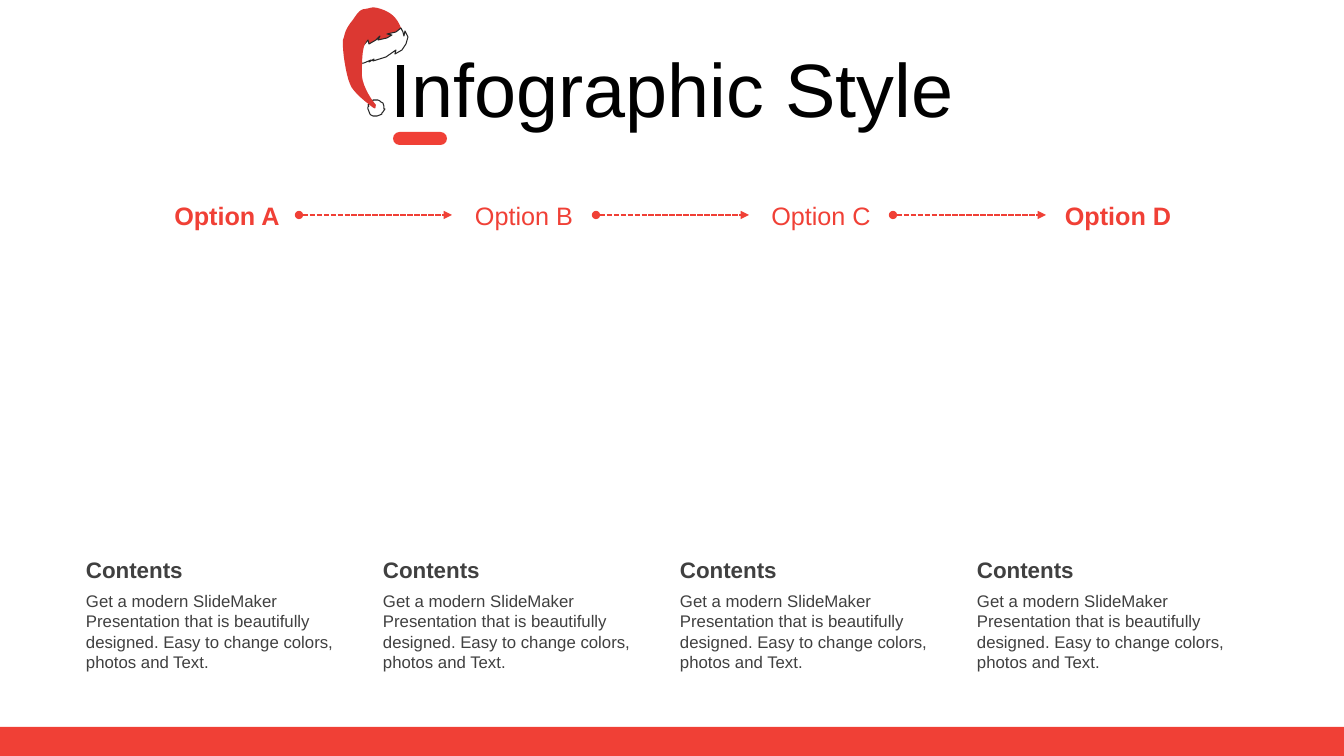
from lxml.etree import SubElement
from pptx import Presentation
from pptx.dml.color import RGBColor
from pptx.enum.dml import MSO_LINE
from pptx.enum.shapes import MSO_CONNECTOR, MSO_SHAPE
from pptx.enum.text import MSO_ANCHOR, MSO_AUTO_SIZE, PP_ALIGN
from pptx.oxml.ns import qn
from pptx.util import Pt

PX = 914400 / 100.8
RED = RGBColor(0xF0, 0x40, 0x36)
HAT_RED = RGBColor(0xDC, 0x38, 0x32)
WHITE = RGBColor(0xFF, 0xFF, 0xFF)
BLACK = RGBColor(0, 0, 0)
GRAY = RGBColor(0x40, 0x40, 0x40)
OUTLINE = RGBColor(0x26, 0x26, 0x26)

TITLE = "Infographic Style"
OPTIONS = [("Option A", True), ("Option B", False), ("Option C", False), ("Option D", True)]
CONTENT = ("Contents", "Get a modern SlideMaker Presentation that is beautifully designed. "
           "Easy to change colors, photos and Text.")

# Column layout in px
COLUMN_STEP = 297
OPTION_LEFT, OPTION_TOP, OPTION_WIDTH, OPTION_HEIGHT = 155, 200, 144, 30
ARROW_Y = 215
CONTENT_LEFT, CONTENT_WIDTH = 86, 267
HEADING_TOP, HEADING_HEIGHT = 556, 27
BODY_TOP, BODY_HEIGHT = 591, 82

# Curved outlines: a start point, then (control, control, end) for each curve
CROWN = ((348, 45), [
    ((347, 44), (345, 43), (344, 42)), ((343, 35), (347, 27), (352, 21)),
    ((356, 16), (359, 9), (365, 9)), ((372, 8), (372, 6), (381, 9)),
    ((390, 12), (397, 17), (401, 28)), ((395, 33), (389, 38), (383, 43)),
    ((377, 43), (368, 44), (362, 44)), ((356, 45), (353, 45), (348, 45))])
TAIL = ((371, 106), [
    ((370, 105), (353, 93), (350, 84)), ((346, 75), (342, 49), (343, 40)),
    ((344, 31), (365, 19), (370, 20)), ((375, 21), (368, 39), (365, 44)),
    ((362, 50), (362, 63), (362, 73)), ((361, 82), (369, 97), (376, 105)),
    ((375, 107), (377, 111), (371, 106))])
POMPOM = [
    (368, 109), (368, 107), (369, 106), (368, 105), (370, 103), (371, 101), (373, 101),
    (373, 100), (375, 100), (378, 100), (380, 101), (381, 102), (383, 103), (384, 106),
    (384, 109), (385, 109), (383, 112), (382, 113), (382, 114), (380, 115), (377, 116),
    (373, 116), (371, 115), (370, 114)]
FUR_BAND = [
    (405, 31), (404, 36), (403, 32), (401, 28), (396, 32), (387, 34), (392, 35), (387, 38),
    (378, 40), (380, 36), (376, 40), (369, 44), (368, 40), (363, 46), (365, 42), (360, 45),
    (354, 46), (347, 43), (346, 47), (348, 51), (346, 51), (352, 61), (351, 59), (353, 62),
    (356, 64), (364, 63), (371, 60), (369, 62), (374, 59), (373, 61), (386, 57), (396, 50),
    (395, 54), (402, 50), (406, 44), (408, 37)]


def px(*lengths):
    return [round(length * PX) for length in lengths]


def flatten(start, curves, steps=8):
    """Turn a chain of cubic curves into a list of points."""
    points = [start]
    for first, second, end in curves:
        origin = points[-1]
        for step in range(1, steps + 1):
            t = step / steps
            weights = ((1 - t) ** 3, 3 * t * (1 - t) ** 2, 3 * t * t * (1 - t), t ** 3)
            corners = (origin, first, second, end)
            points.append(tuple(sum(w * c[axis] for w, c in zip(weights, corners))
                                for axis in (0, 1)))
    return points


def write_text(shape, text, size, color, bold=False, align=PP_ALIGN.LEFT):
    frame = shape.text_frame
    frame.word_wrap = True
    frame.auto_size = MSO_AUTO_SIZE.NONE
    paragraph = frame.paragraphs[0]
    paragraph.alignment = align
    run = paragraph.add_run()
    run.text = text
    run.font.name = "Arial"
    run.font.size = Pt(size)
    run.font.bold = bold
    run.font.color.rgb = color
    return paragraph


def add_text(slide, box, text, **text_format):
    shape = slide.shapes.add_textbox(*px(*box))
    frame = shape.text_frame
    frame.margin_left = frame.margin_right = frame.margin_top = frame.margin_bottom = 0
    write_text(shape, text, **text_format)


def paint(shape, fill, outline=None):
    shape.shadow.inherit = False
    shape.fill.solid()
    shape.fill.fore_color.rgb = fill
    if outline is None:
        shape.line.fill.background()
    else:
        shape.line.color.rgb = outline
        shape.line.width = Pt(0.75)


def add_outline(slide, points, fill, outline=None):
    start, *others = [px(*point) for point in points]
    builder = slide.shapes.build_freeform(*start)
    builder.add_line_segments(others, close=True)
    paint(builder.convert_to_shape(), fill, outline)


def add_arrow(slide, left, right, y):
    arrow = slide.shapes.add_connector(MSO_CONNECTOR.STRAIGHT, *px(left, y, right, y))
    arrow.line.color.rgb = RED
    arrow.line.width = Pt(1.25)
    arrow.line.dash_style = MSO_LINE.SQUARE_DOT
    line = arrow.line._get_or_add_ln()
    SubElement(line, qn("a:headEnd"), type="oval")
    SubElement(line, qn("a:tailEnd"), type="triangle")
    SubElement(arrow._element.spPr, qn("a:effectLst"))


def add_title(slide):
    title = slide.shapes.title
    title.left, title.top, title.width, title.height = px(34, 53, 1276, 80)
    title.text_frame.vertical_anchor = MSO_ANCHOR.MIDDLE
    paragraph = write_text(title, TITLE, 54, BLACK, align=PP_ALIGN.CENTER)
    paragraph.line_spacing = 0.9
    paragraph.space_before = Pt(10)


def add_hat(slide):
    add_outline(slide, flatten(*CROWN), HAT_RED)
    add_outline(slide, POMPOM, WHITE, OUTLINE)
    add_outline(slide, FUR_BAND, WHITE, OUTLINE)
    add_outline(slide, flatten(*TAIL), HAT_RED)


def main():
    presentation = Presentation()
    presentation.slide_width, presentation.slide_height = px(1344, 756)
    slide = presentation.slides.add_slide(presentation.slide_layouts[5])

    footer = slide.shapes.add_shape(MSO_SHAPE.RECTANGLE, *px(0, 727, 1344, 29))
    paint(footer, RED)

    heading, body = CONTENT
    for column, (option, bold) in enumerate(OPTIONS):
        shift = column * COLUMN_STEP
        content_left = CONTENT_LEFT + shift
        add_text(slide, (content_left, HEADING_TOP, CONTENT_WIDTH, HEADING_HEIGHT), heading,
                 size=16, color=GRAY, bold=True)
        add_text(slide, (content_left, BODY_TOP, CONTENT_WIDTH, BODY_HEIGHT), body,
                 size=12, color=GRAY)
        option_left = OPTION_LEFT + shift
        add_text(slide, (option_left, OPTION_TOP, OPTION_WIDTH, OPTION_HEIGHT), option,
                 size=18, color=RED, bold=bold, align=PP_ALIGN.CENTER)
        if column < len(OPTIONS) - 1:
            add_arrow(slide, option_left + OPTION_WIDTH, option_left + COLUMN_STEP, ARROW_Y)

    add_title(slide)
    add_hat(slide)
    underline = slide.shapes.add_shape(MSO_SHAPE.ROUNDED_RECTANGLE, *px(393, 132, 54, 13))
    underline.adjustments[0] = 0.5
    paint(underline, RED)
    presentation.save("out.pptx")


if __name__ == "__main__":
    main()
